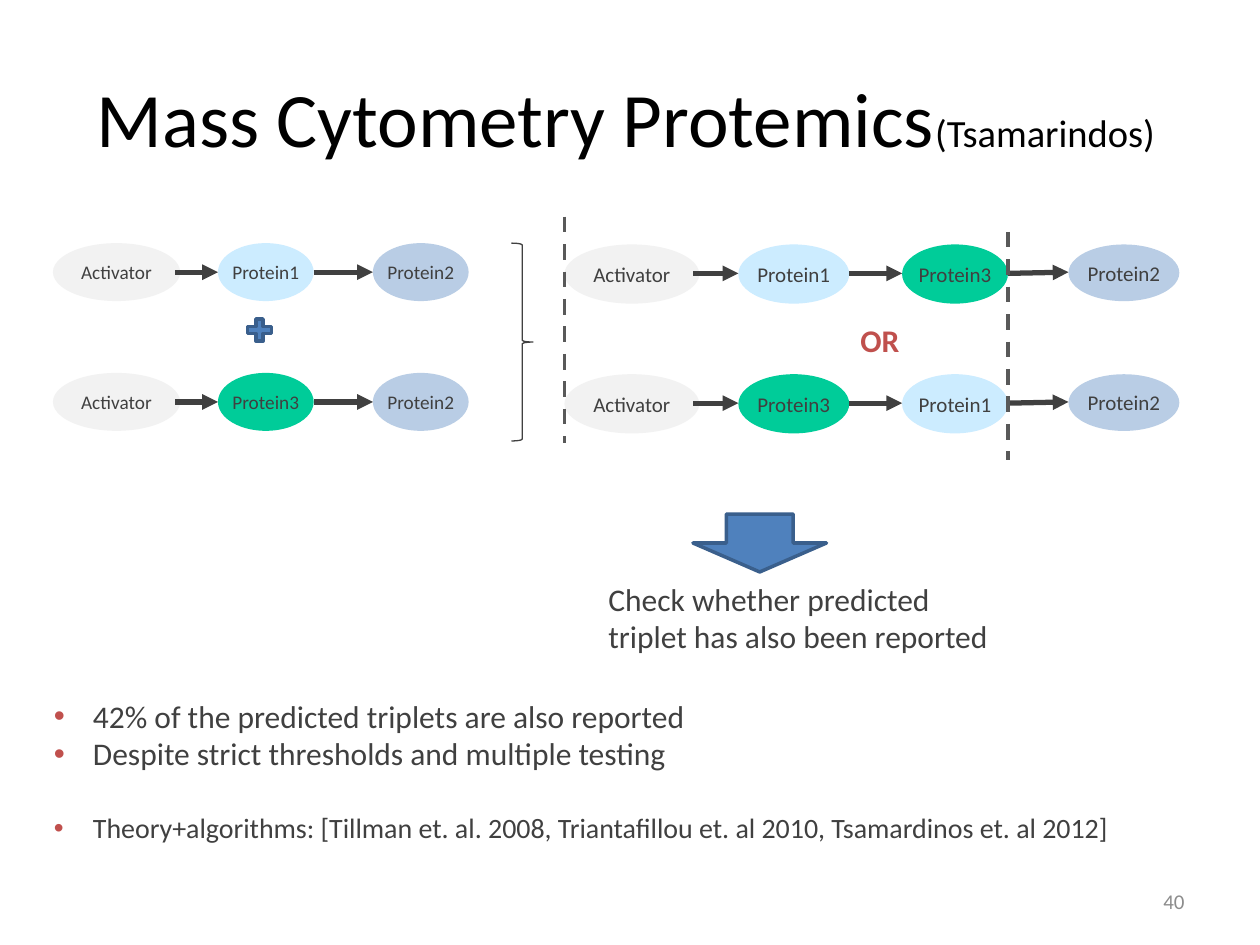
import pptx
import pptx.util
import pptx.oxml
import pptx.dml.color
import pptx.enum.dml
import pptx.enum.shapes
import pptx.enum.text

Inches, Pt = pptx.util.Inches, pptx.util.Pt
Kind = pptx.enum.shapes.MSO_SHAPE
Align = pptx.enum.text.PP_ALIGN
Anchor = pptx.enum.text.MSO_ANCHOR

HUES = {
    "black": "000000", "text": "404040", "page": "8C8C8C", "red": "C0504D",
    "dash": "595959", "blue": "4F81BD", "edge": "3A5F8C",
    "Activator": "F2F2F2", "Protein1": "CCECFF",
    "Protein2": "B9CDE5", "Protein3": "00CC99",
}
RGB = {name: pptx.dml.color.RGBColor.from_string(code) for name, code in HUES.items()}

deck = pptx.Presentation()
deck.slide_width, deck.slide_height = Inches(10), Inches(7.5)
slide = deck.slides.add_slide(deck.slide_layouts[6])
shapes = slide.shapes


def write(text, box=None, para=None, shape=None, size=18, hue="text", bold=False,
          align=Align.LEFT, anchor=Anchor.TOP):
    """Add a run to para, to the first paragraph of shape, or to a new text box."""
    if para is None:
        shape = shape or shapes.add_textbox(*map(Inches, box))
        frame = shape.text_frame
        frame.word_wrap = box is not None
        frame.vertical_anchor = anchor
        para = frame.paragraphs[0]
        para.alignment = align
    run = para.add_run()
    run.text = text
    font = run.font
    font.name, font.size, font.bold = "Calibri", Pt(size), bold
    font.color.rgb = RGB[hue]
    return para


def draw(kind, box, fill=None, edge=None, width=2):
    """Add a preset shape, or a straight line from x1, y1 to x2, y2 if kind is None."""
    where = map(Inches, box)
    if kind is None:
        item = shapes.add_connector(pptx.enum.shapes.MSO_CONNECTOR.STRAIGHT, *where)
        item._element.spPr.append(pptx.oxml.parse_xml(
            '<a:effectLst xmlns:a="http://schemas.openxmlformats.org/drawingml/2006/main"/>'))
    else:
        item = shapes.add_shape(kind, *where)
        item.shadow.inherit = False
        if fill:
            item.fill.solid()
            item.fill.fore_color.rgb = RGB[fill]
        else:
            item.fill.background()
    if edge:
        item.line.color.rgb = RGB[edge]
        item.line.width = Pt(width)
    else:
        item.line.fill.background()
    return item


# Title and page number
title = write("Mass Cytometry Protemics", box=(0.5, 0.3, 9, 1.25), size=44,
              hue="black", align=Align.CENTER, anchor=Anchor.MIDDLE)
write("(Tsamarindos) ", para=title, size=22, hue="black")
write("40", box=(7.17, 6.95, 2.33, 0.4), size=12, hue="page",
      align=Align.RIGHT, anchor=Anchor.MIDDLE)

# Pathways: each column is left, width, height; each arrow is x1, x2, fall
left = {
    "top": 1.93, "size": 11, "mid": 0.23,
    "cols": [(0.42, 1.01, 0.46), (1.73, 0.76, 0.46), (2.96, 0.76, 0.46)],
    "arrows": [(1.39, 1.73, 0), (2.49, 2.96, 0)],
    "rows": [("Activator", "Protein1", "Protein2"),
             ("Activator", "Protein3", "Protein2")],
}
right = {
    "top": 1.94, "size": 12, "mid": 0.23,
    "cols": [(4.48, 1.07, 0.47), (5.86, 0.88, 0.47), (7.16, 0.84, 0.47),
             (8.48, 0.88, 0.45)],
    "arrows": [(5.5, 5.86, 0), (6.74, 7.16, 0), (8, 8.48, -0.01)],
    "rows": [("Activator", "Protein1", "Protein3", "Protein2"),
             ("Activator", "Protein3", "Protein1", "Protein2")],
}
for side in (left, right):
    for i, names in enumerate(side["rows"]):
        top = side["top"] + i * 1.03
        for name, (x, wide, high) in zip(names, side["cols"]):
            node = draw(Kind.OVAL, (x, top, wide, high), fill=name)
            frame = node.text_frame
            frame.margin_left = frame.margin_right = 0
            frame.margin_top = frame.margin_bottom = Inches(0.04)
            write(name, shape=node, size=side["size"], align=Align.CENTER,
                  anchor=Anchor.MIDDLE)
        y = top + side["mid"]
        for start, end, fall in side["arrows"]:
            arrow = draw(None, (start, y, end, y + fall), edge="text", width=3)
            arrow.line._get_or_add_ln().append(pptx.oxml.parse_xml(
                '<a:tailEnd xmlns:a="http://schemas.openxmlformats.org/drawingml/2006/main"'
                ' type="triangle"/>'))

# Signs between the pathways
draw(Kind.MATH_PLUS, (1.93, 2.5, 0.26, 0.24), fill="blue", edge="edge")
draw(Kind.RIGHT_BRACE, (4.06, 1.93, 0.17, 1.57), edge="text", width=0.75)
write("OR", box=(6.73, 2.5, 1.39, 0.4), hue="red", bold=True)
for x, top, end in ((4.48, 1.72, 3.52), (8, 1.84, 3.65)):
    rule = draw(None, (x, top, x, end), edge="dash", width=2.25)
    rule.line.dash_style = pptx.enum.dml.MSO_LINE.DASH

# Check step
draw(Kind.DOWN_ARROW, (5.5, 4.08, 1.06, 0.46), fill="blue", edge="edge")
write("Check whether predicted triplet has also been reported",
      box=(4.73, 4.55, 3.39, 0.71))

# Findings: text, size, space before
notes = [
    ("42% of the predicted triplets are also reported", 18, 0),
    ("Despite strict thresholds and multiple testing", 18, 0),
    ("Theory+algorithms: [Tillman et. al. 2008, Triantafillou et. al 2010, "
     "Tsamardinos et. al 2012]", 16, 22),
]
body = shapes.add_textbox(*map(Inches, (0.33, 5.48, 9.54, 1.28))).text_frame
body.word_wrap = True
for i, (text, size, gap) in enumerate(notes):
    para = body.add_paragraph() if i else body.paragraphs[0]
    para.space_before = Pt(gap)
    write(text, para=para, size=size)
    props = para._p.get_or_add_pPr()
    props.set("marL", str(Inches(0.31)))
    props.set("indent", str(-Inches(0.31)))
    for mark in (f'buClr {{}}><a:srgbClr val="{HUES["red"]}"/></a:buClr>',
                 'buFont {} typeface="Arial"/>', 'buChar {} char="•"/>'):
        props.append(pptx.oxml.parse_xml("<a:" + mark.format(
            'xmlns:a="http://schemas.openxmlformats.org/drawingml/2006/main"')))

deck.save("out.pptx")
